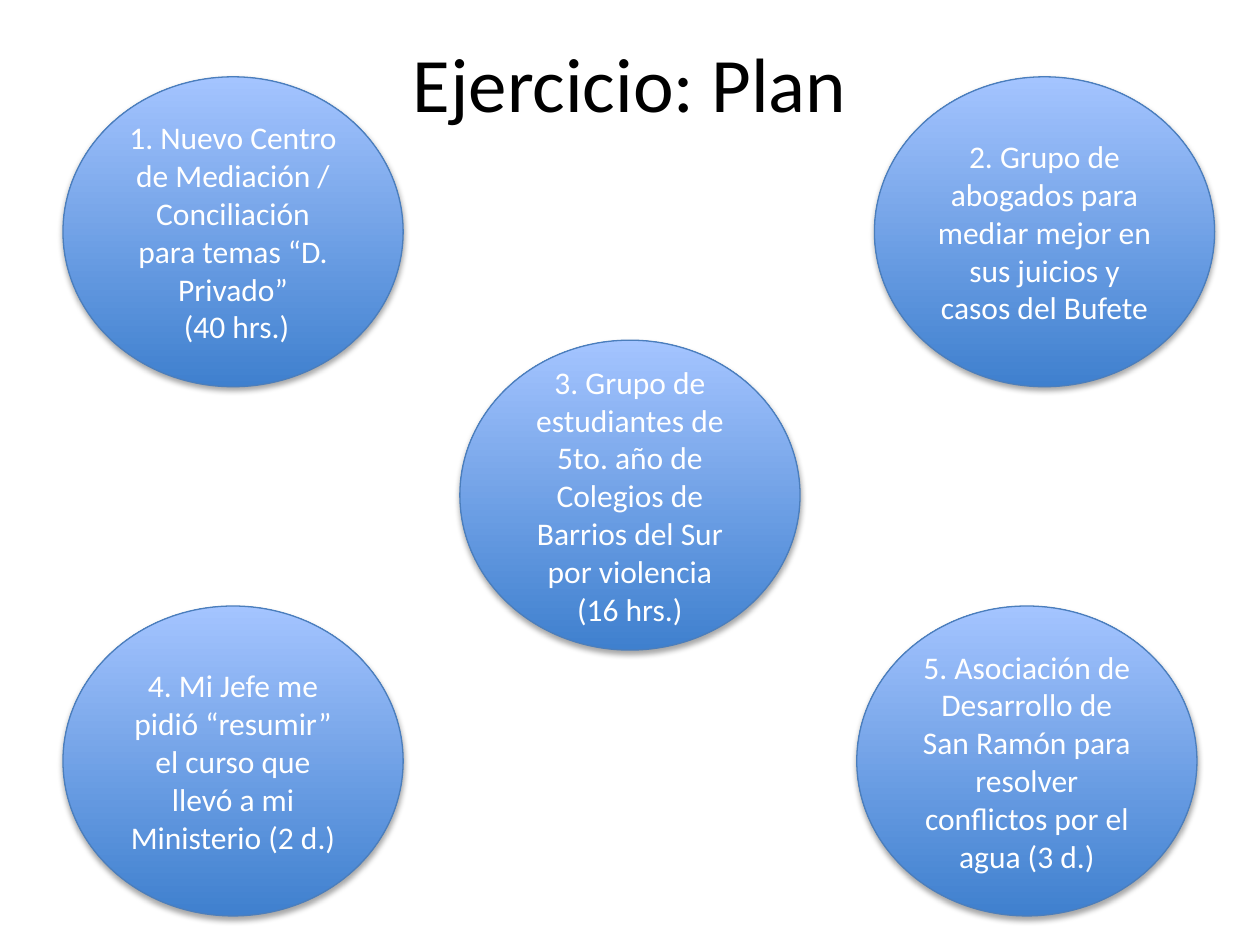
from lxml import etree
from pptx import Presentation
from pptx import util as u
from pptx.dml.color import RGBColor
from pptx.enum import shapes, text
from pptx.oxml.ns import qn

HEADING = "Ejercicio: Plan"
LEFT, CENTER, TOP, MIDDLE, BOTTOM = 0.5, 3.65, 0.61, 2.7, 4.81
CASES = [
    (LEFT, TOP, ["1. Nuevo Centro de Mediación / Conciliación para temas “D. Privado”",
                 " (40 hrs.)"]),
    (6.94, TOP, ["2. Grupo de abogados para mediar mejor en sus juicios y casos del Bufete"]),
    (LEFT, BOTTOM, ["4. Mi Jefe me pidió “resumir” el curso que llevó a mi Ministerio (2 d.)"]),
    (6.8, BOTTOM, ["5. Asociación de Desarrollo de San Ramón para resolver conflictos "
                   "por el agua (3 d.)"]),
    (CENTER, MIDDLE, ["3. Grupo de estudiantes de 5to. año de Colegios de Barrios del Sur "
                      "por violencia", "(16 hrs.)"]),
]
CASE_SIZE = (2.7, 2.46)
THEME = {
    "font": "Calibri", "heading_size": 44, "case_size": 18,
    "heading": "000000", "case": "FFFFFF",
    "gradient": ("3F80CE", "A4C4FF"), "outline": "4B7EBC", "outline_width": 0.75,
    "shadow": {"color": "000000", "alpha": 35, "blur": 3.1, "distance": 1.8, "angle": 90},
}


def write(frame, lines, size, color):
    frame.word_wrap = True
    frame.vertical_anchor = text.MSO_ANCHOR.MIDDLE
    frame.text = "\n".join(lines)
    for paragraph in frame.paragraphs:
        paragraph.alignment = text.PP_ALIGN.CENTER
        paragraph.font.name = THEME["font"]
        paragraph.font.size = u.Pt(size)
        paragraph.font.color.rgb = RGBColor.from_string(color)


def add_shadow(shape):
    shadow = THEME["shadow"]
    shape.shadow.inherit = False
    effects = shape.element.spPr.find(qn("a:effectLst"))
    outer = etree.SubElement(effects, qn("a:outerShdw"), {
        "blurRad": str(u.Pt(shadow["blur"])), "dist": str(u.Pt(shadow["distance"])),
        "dir": str(shadow["angle"] * 60000), "rotWithShape": "0"})
    color = etree.SubElement(outer, qn("a:srgbClr"), val=shadow["color"])
    etree.SubElement(color, qn("a:alpha"), val=str(shadow["alpha"] * 1000))


def add_case(slide, left, top, lines):
    case = slide.shapes.add_shape(
        shapes.MSO_SHAPE.OVAL, *map(u.Inches, (left, top, *CASE_SIZE)))
    case.fill.gradient()
    case.fill.gradient_angle = 90
    for stop, color in zip(case.fill.gradient_stops, THEME["gradient"]):
        stop.color.rgb = RGBColor.from_string(color)
    case.line.color.rgb = RGBColor.from_string(THEME["outline"])
    case.line.width = u.Pt(THEME["outline_width"])
    add_shadow(case)
    write(case.text_frame, lines, THEME["case_size"], THEME["case"])


def main():
    deck = Presentation()
    deck.slide_width, deck.slide_height = u.Inches(10), u.Inches(7.5)
    slide = deck.slides.add_slide(deck.slide_layouts[5])
    heading = slide.shapes.title
    heading.left, heading.top, heading.width, heading.height = map(
        u.Inches, (0.5, 0.02, 9, 1.25))
    write(heading.text_frame, [HEADING], THEME["heading_size"], THEME["heading"])
    for left, top, lines in CASES:
        add_case(slide, left, top, lines)
    deck.save("out.pptx")


if __name__ == "__main__":
    main()
